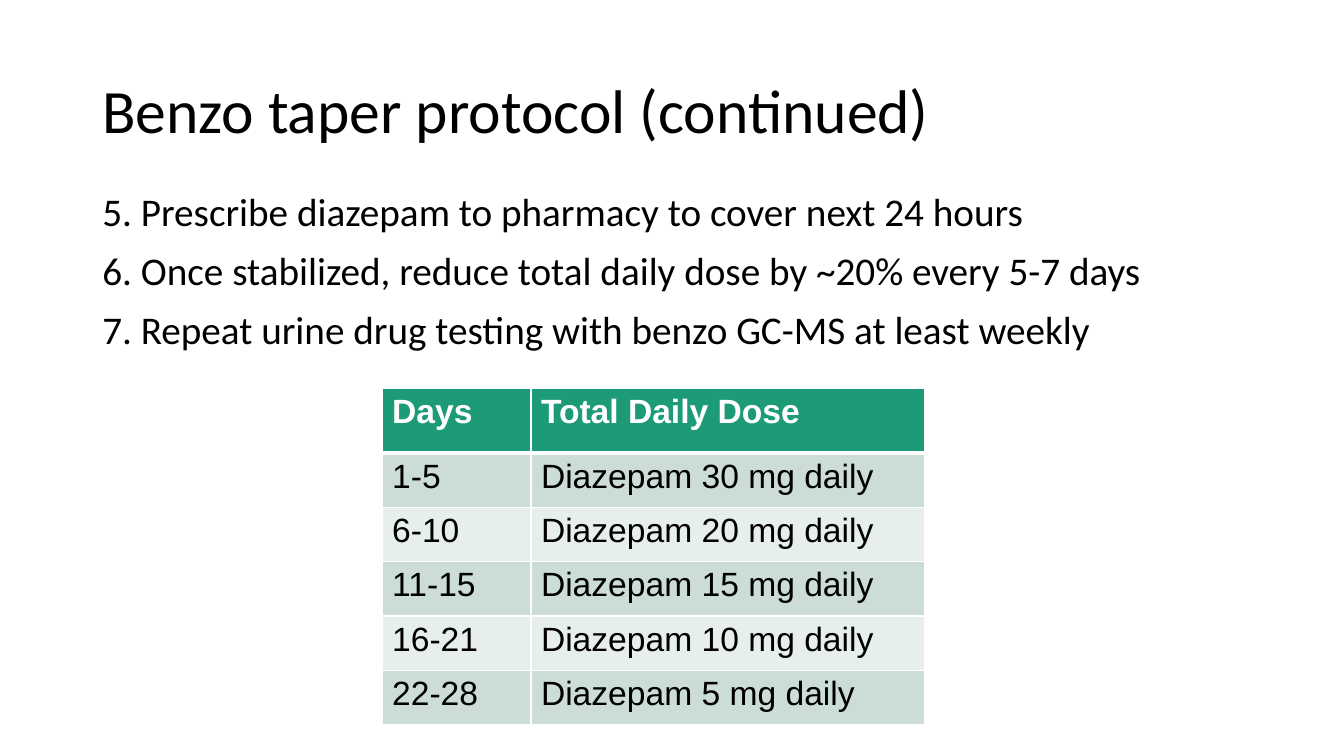
from dataclasses import dataclass

import pptx
import pptx.dml.color
import pptx.enum.text
import pptx.oxml
import pptx.oxml.ns
import pptx.util
from pptx.dml.color import RGBColor
from pptx.util import Cm

BLACK = RGBColor(0x00, 0x00, 0x00)
WHITE = RGBColor(0xFF, 0xFF, 0xFF)
GREEN = RGBColor(0x1D, 0x9A, 0x78)
DARK_BAND = RGBColor(0xCB, 0xDD, 0xD5)
LIGHT_BAND = RGBColor(0xE7, 0xEF, 0xEB)

TEXT_LEFT = Cm(2.33)
TEXT_WIDTH = Cm(29.21)
COLUMN_WIDTHS = (Cm(3.75), Cm(9.93))
HEADER_HEIGHT = Cm(1.63)
STEP_HEIGHT = Cm(1.37)

TAPER_STEPS = [
    "5. Prescribe diazepam to pharmacy to cover next 24 hours",
    "6. Once stabilized, reduce total daily dose by ~20% every 5-7 days",
    "7. Repeat urine drug testing with benzo GC-MS at least weekly",
]


@dataclass(frozen=True)
class TextBlock:
    lines: list[str]
    top: int
    height: int
    size: int
    anchor: pptx.enum.text.MSO_ANCHOR


@dataclass(frozen=True)
class Dose:
    days: str
    total: str


HEADINGS = Dose("Days", "Total Daily Dose")
DOSES = [
    Dose("1-5", "Diazepam 30 mg daily"),
    Dose("6-10", "Diazepam 20 mg daily"),
    Dose("11-15", "Diazepam 15 mg daily"),
    Dose("16-21", "Diazepam 10 mg daily"),
    Dose("22-28", "Diazepam 5 mg daily"),
]


def style_paragraph(paragraph, name: str, size: int, color: RGBColor, bold: bool = False) -> None:
    paragraph.font.name = name
    paragraph.font.size = pptx.util.Pt(size)
    paragraph.font.bold = bold
    paragraph.font.color.rgb = color


def add_text_block(slide, block: TextBlock) -> None:
    frame = slide.shapes.add_textbox(TEXT_LEFT, block.top, TEXT_WIDTH, block.height).text_frame
    frame.word_wrap = True
    frame.vertical_anchor = block.anchor
    frame.text = "\n".join(block.lines)
    for index, paragraph in enumerate(frame.paragraphs):
        style_paragraph(paragraph, "Calibri", block.size, BLACK)
        paragraph.line_spacing = 0.9
        paragraph.space_before = pptx.util.Pt(12 if index else 0)


def add_cell_borders(cell, top: int, bottom: int) -> None:
    """Draw white borders, 1 pt at the sides; must run before the cell is filled."""
    properties = cell._tc.get_or_add_tcPr()
    for side, points in (("L", 1), ("R", 1), ("T", top), ("B", bottom)):
        properties.append(pptx.oxml.parse_xml(
            f'<a:ln{side} {pptx.oxml.ns.nsdecls("a")} w="{pptx.util.Pt(points)}">'
            f'<a:solidFill><a:srgbClr val="{WHITE}"/></a:solidFill></a:ln{side}>'
        ))


def add_dose_table(slide, left: int, top: int) -> None:
    rows = [HEADINGS, *DOSES]
    heights = [HEADER_HEIGHT] + [STEP_HEIGHT] * len(DOSES)
    table = slide.shapes.add_table(
        len(rows), len(COLUMN_WIDTHS), left, top, sum(COLUMN_WIDTHS), sum(heights)
    ).table
    for column, width in zip(table.columns, COLUMN_WIDTHS):
        column.width = width
    for index, (dose, height) in enumerate(zip(rows, heights)):
        table.rows[index].height = height
        is_header = index == 0
        band = DARK_BAND if index % 2 else LIGHT_BAND
        for cell, text in zip(table.rows[index].cells, (dose.days, dose.total)):
            cell.text = text
            style_paragraph(cell.text_frame.paragraphs[0], "Arial", 24,
                            WHITE if is_header else BLACK, is_header)
            add_cell_borders(cell, top=3 if index == 1 else 1, bottom=3 if is_header else 1)
            cell.fill.solid()
            cell.fill.fore_color.rgb = GREEN if is_header else band


def main() -> None:
    presentation = pptx.Presentation()
    presentation.slide_width = Cm(33.87)
    presentation.slide_height = Cm(19.05)
    slide = presentation.slides.add_slide(presentation.slide_layouts[6])

    anchors = pptx.enum.text.MSO_ANCHOR
    add_text_block(slide, TextBlock(["Benzo taper protocol (continued)"],
                                    Cm(1.01), Cm(3.68), 44, anchors.MIDDLE))
    add_text_block(slide, TextBlock(TAPER_STEPS, Cm(4.72), Cm(12.09), 28, anchors.TOP))
    add_dose_table(slide, Cm(9.63), Cm(9.78))

    presentation.save("out.pptx")


if __name__ == "__main__":
    main()
